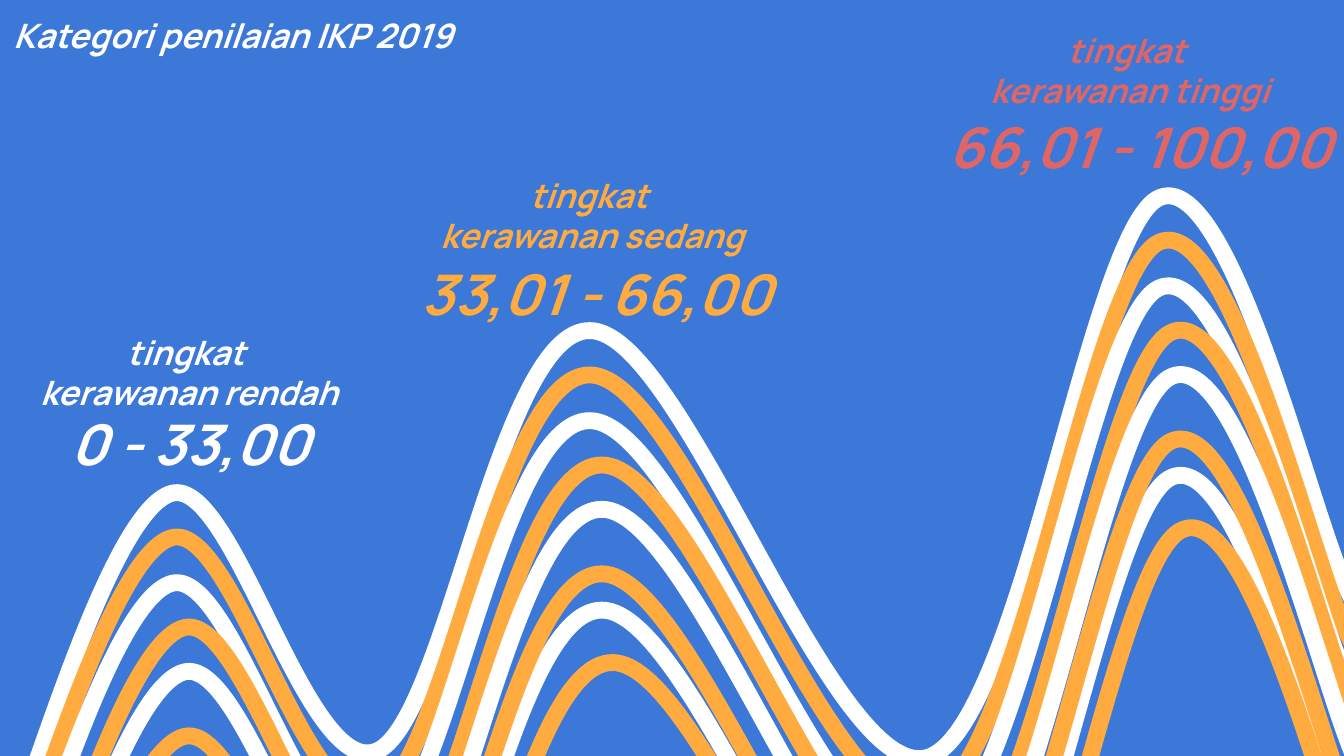
from lxml.etree import SubElement
from pptx import Presentation
from pptx.dml.color import RGBColor
from pptx.enum.text import MSO_ANCHOR, MSO_AUTO_SIZE, PP_ALIGN
from pptx.oxml.ns import qn
from pptx.util import Inches, Pt

BLUE = RGBColor(0x3C, 0x78, 0xD8)
WHITE = RGBColor(0xFF, 0xFF, 0xFF)
ORANGE = RGBColor(0xFF, 0xAB, 0x40)
RED = RGBColor(0xE0, 0x66, 0x66)
FONT = "Manrope"

TITLE = "Kategori penilaian IKP 2019"
LEVELS = [
    (["tingkat ", "kerawanan rendah"], (-0.72, 2.37), "0 - 33,00", (0.43, 2.95), 2.03, WHITE),
    (["tingkat ", "kerawanan sedang"], (2.28, 1.2), "33,01 - 66,00", (3.04, 1.83), 3.24, ORANGE),
    (["tingkat ", "kerawanan tinggi"], (6.28, 0.12), "66,01 - 100,00", (6.96, 0.74), 3.24, RED),
]

WAVE_START = (0, 4.87)
WAVE_CURVES = [
    [(0.21, 4.43), (0.79, 2.34), (1.25, 2.22)],
    [(1.71, 2.1), (2.25, 4.34), (2.77, 4.14)],
    [(3.29, 3.94), (3.68, 1), (4.36, 1.01)],
    [(5.05, 1.01), (6.15, 4.35), (6.86, 4.19)],
    [(7.56, 4.02), (8.08, 0.23), (8.6, 0.02)],
    [(9.12, -0.2), (9.72, 2.35), (9.97, 2.88)],
    [(10.22, 3.4), (10.08, 3.1), (10.1, 3.15)],
]
WAVES = [
    (0.12, 3.53, WHITE), (0.2, 3.92, ORANGE),
    (0.03, 1.45, WHITE), (0.03, 1.78, ORANGE), (0.03, 2.12, WHITE),
    (0.12, 2.45, ORANGE), (0.12, 2.78, WHITE), (0.12, 3.26, ORANGE),
]


def add_wave(s, left, top, color):
    def place(point):
        return Inches(left + point[0]), Inches(top + point[1])

    builder = s.shapes.build_freeform(*place(WAVE_START))
    builder.add_line_segments([place(c[-1]) for c in WAVE_CURVES], close=False)
    sp = builder.convert_to_shape()
    lines = sp._element.findall(".//" + qn("a:lnTo"))
    for line, curve in zip(lines, WAVE_CURVES):
        outline = line.getparent()
        outline.remove(line)
        bezier = SubElement(outline, qn("a:cubicBezTo"))
        for point in curve:
            x, y = place(point)
            SubElement(bezier, qn("a:pt"), x=str(x - sp.left), y=str(y - sp.top))
    sp.shadow.inherit = False
    sp.fill.background()
    sp.line.color.rgb = color
    sp.line.width = Pt(9)


def write(sp, lines, size, color, align):
    tf = sp.text_frame
    tf.word_wrap = True
    tf.auto_size = MSO_AUTO_SIZE.NONE
    tf.vertical_anchor = MSO_ANCHOR.TOP
    tf.margin_left = tf.margin_right = tf.margin_top = tf.margin_bottom = Inches(0.1)
    tf.text = "\n".join(lines)
    for p in tf.paragraphs:
        p.alignment = align
        p.font.name = FONT
        p.font.size = Pt(size)
        p.font.bold = p.font.italic = True
        p.font.color.rgb = color


def add_text(s, at, width, lines, size, color, align):
    sp = s.shapes.add_textbox(Inches(at[0]), Inches(at[1]), Inches(width), Inches(0.94))
    write(sp, lines, size, color, align)


prs = Presentation()
prs.slide_width = Inches(10)
prs.slide_height = prs.slide_width * 9 // 16
s = prs.slides.add_slide(prs.slide_layouts[5])
s.background.fill.solid()
s.background.fill.fore_color.rgb = BLUE

title = s.shapes.title
title.left, title.top = Inches(0), Inches(0.01)
title.width, title.height = Inches(3.68), Inches(0.87)
write(title, [TITLE], 18, WHITE, PP_ALIGN.LEFT)

for left, top, color in WAVES:
    add_wave(s, left, top, color)

for label, label_at, score, score_at, score_width, color in LEVELS:
    add_text(s, label_at, 4.25, label, 18, color, PP_ALIGN.CENTER)
    add_text(s, score_at, score_width, [score], 30, color, PP_ALIGN.LEFT)

prs.save("out.pptx")
